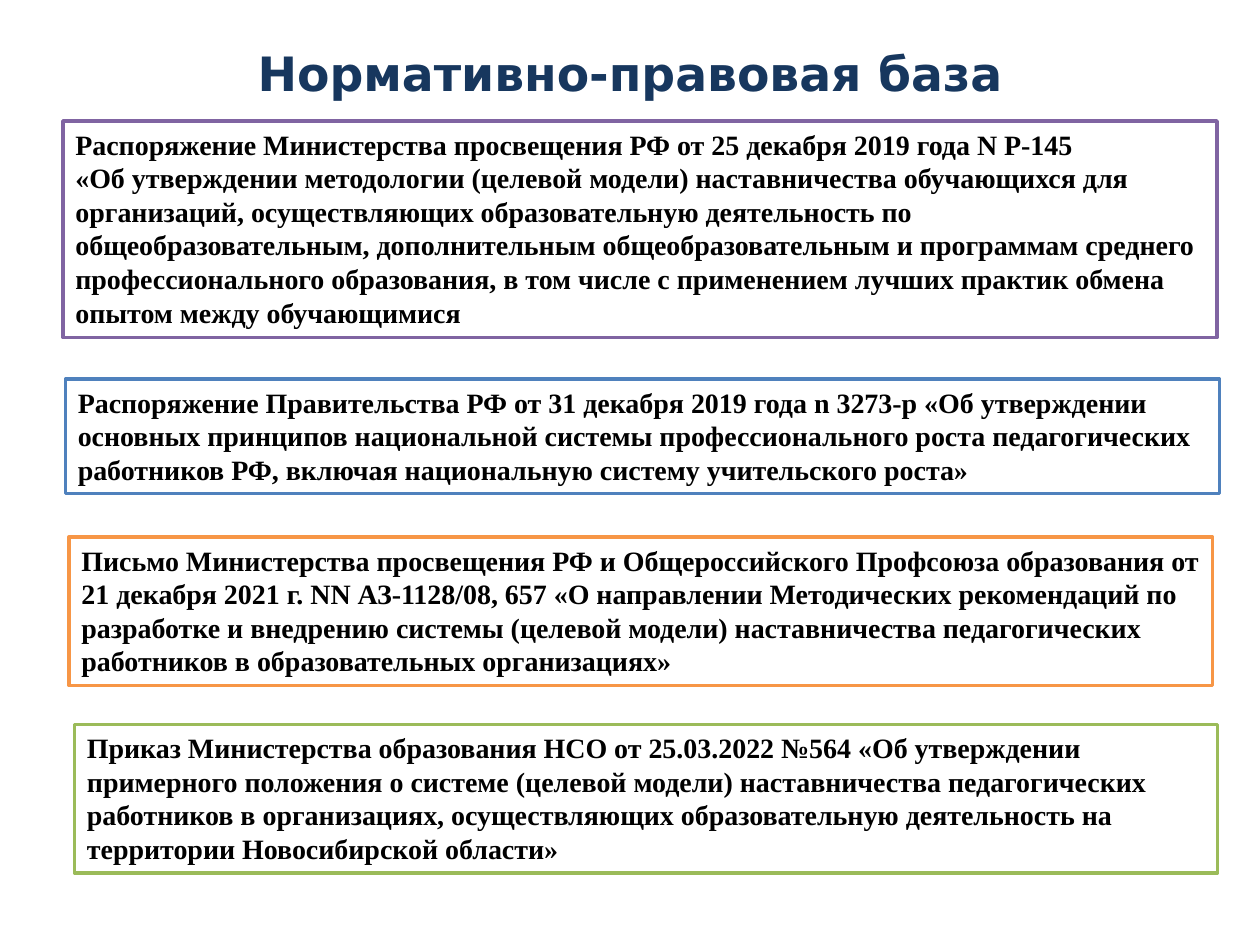
from pptx import Presentation
from pptx.dml.color import RGBColor
from pptx.enum.text import MSO_ANCHOR, PP_ALIGN
from pptx.util import Pt

LEFT, CENTER = PP_ALIGN.LEFT, PP_ALIGN.CENTER
TOP = MSO_ANCHOR.TOP

TITLE = "Нормативно-правовая база"

# left, top, width, height, border colour, paragraphs
ACTS = [
    (36, 69.1, 659.5, 123.8, "8064A2", [
        "Распоряжение Министерства просвещения РФ от 25 декабря 2019 года N Р-145",
        "«Об утверждении методологии (целевой модели) наставничества обучающихся "
        "для организаций, осуществляющих образовательную деятельность по "
        "общеобразовательным, дополнительным общеобразовательным и программам "
        "среднего профессионального образования, в том числе с применением лучших "
        "практик обмена опытом между обучающимися",
    ]),
    (37.4, 216.6, 659.5, 65.5, "4F81BD", [
        "Распоряжение Правительства РФ от 31 декабря 2019 года n 3273-р "
        "«Об утверждении основных принципов национальной системы "
        "профессионального роста педагогических работников РФ, включая "
        "национальную систему учительского роста»",
    ]),
    (39.5, 306.9, 653.5, 84.8, "F79646", [
        "Письмо Министерства просвещения РФ и Общероссийского Профсоюза "
        "образования от 21 декабря 2021 г. NN АЗ-1128/08, 657 «О направлении "
        "Методических рекомендаций по разработке и внедрению системы (целевой "
        "модели) наставничества педагогических работников в образовательных "
        "организациях»",
    ]),
    (42.6, 414, 653.2, 84.8, "9BBB59", [
        "Приказ Министерства образования НСО от 25.03.2022 №564 «Об утверждении "
        "примерного положения о системе (целевой модели) наставничества "
        "педагогических работников в организациях, осуществляющих "
        "образовательную деятельность на территории Новосибирской области»",
    ]),
]


def color(code):
    return RGBColor.from_string(code)


def add_text(slide, place, lines, face, size, ink, align=LEFT):
    box = slide.shapes.add_textbox(*map(Pt, place))
    frame = box.text_frame
    frame.word_wrap = True
    frame.vertical_anchor = TOP
    frame.text = "\n".join(lines)
    for para in frame.paragraphs:
        para.alignment = align
        font = para.font
        font.name, font.size, font.bold = face, Pt(size), True
        font.color.rgb = color(ink)
    return box


def add_title(slide):
    box = add_text(slide, (42.5, 25.2, 635, 32.4), [TITLE],
                   "DejaVu Sans", 27, "17375E", CENTER)
    box.fill.solid()
    box.fill.fore_color.rgb = color("FFFFFF")
    frame = box.text_frame
    frame.margin_left = frame.margin_right = 0
    frame.margin_top = frame.margin_bottom = 0


def add_act(slide, left, top, width, height, edge, lines):
    box = add_text(slide, (left, top, width, height), lines,
                   "Times New Roman", 16, "000000")
    box.line.color.rgb = color(edge)
    box.line.width = Pt(2)


def main():
    deck = Presentation()
    deck.slide_width, deck.slide_height = Pt(720), Pt(540)
    slide = deck.slides.add_slide(deck.slide_layouts[6])
    add_title(slide)
    for act in ACTS:
        add_act(slide, *act)
    deck.save("out.pptx")


if __name__ == "__main__":
    main()
